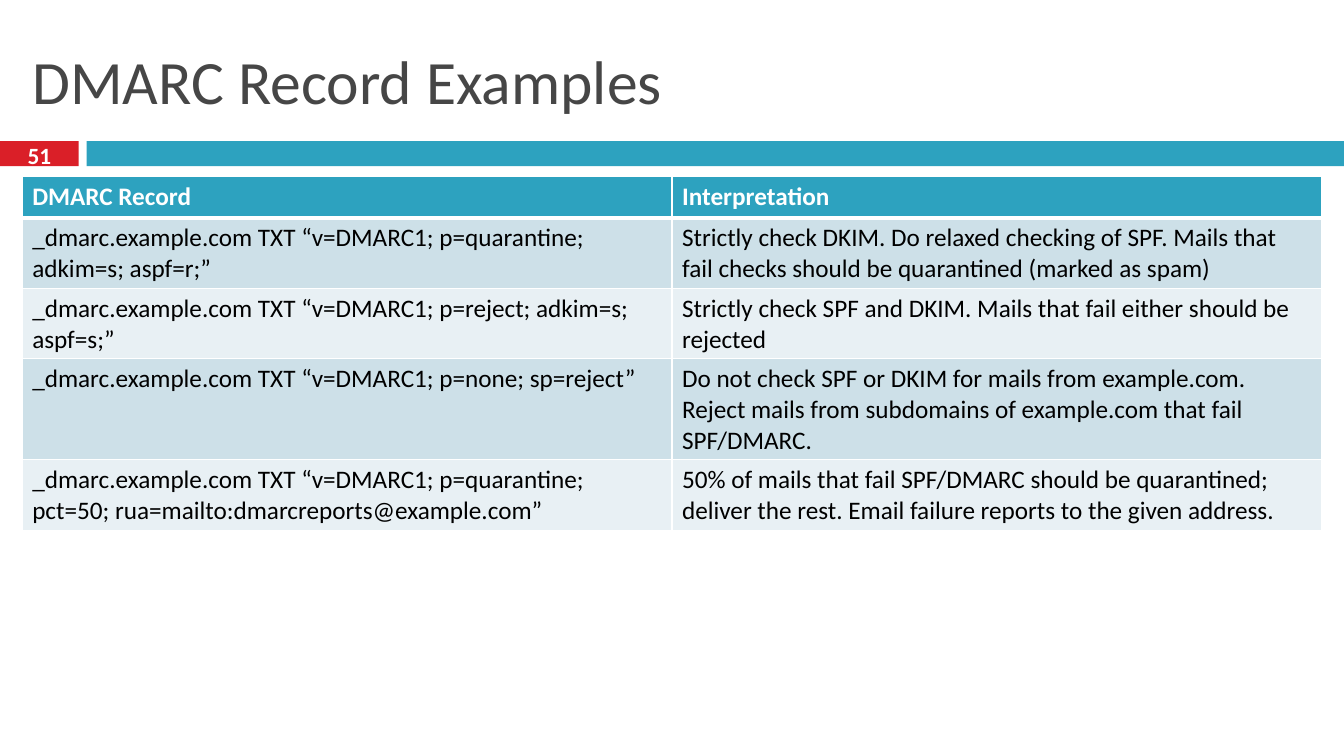
from lxml.etree import SubElement as Sub
from pptx import Presentation
from pptx.dml.color import RGBColor
from pptx.enum.shapes import MSO_SHAPE as Shape
from pptx.enum.text import MSO_ANCHOR as Anchor, MSO_AUTO_SIZE as Auto, PP_ALIGN as Align
from pptx.oxml.ns import qn
from pptx.util import Inches, Pt

WHITE, TEAL, RED, BLACK, GREY = "FFFFFF", "2DA2BF", "DA1F28", "000000", "464646"
BANDS = ["CDE0E8", "E8F0F4"]
LEFT, WIDTH = 1.65, 96.7

RECORDS = [
    ("DMARC Record", "Interpretation"),
    ("_dmarc.example.com TXT “v=DMARC1; p=quarantine; adkim=s; aspf=r;”",
     "Strictly check DKIM. Do relaxed checking of SPF. Mails that fail checks "
     "should be quarantined (marked as spam)"),
    ("_dmarc.example.com TXT “v=DMARC1; p=reject; adkim=s; aspf=s;”",
     "Strictly check SPF and DKIM. Mails that fail either should be rejected"),
    ("_dmarc.example.com TXT “v=DMARC1; p=none; sp=reject”",
     "Do not check SPF or DKIM for mails from example.com. Reject mails from "
     "subdomains of example.com that fail SPF/DMARC."),
    ("_dmarc.example.com TXT “v=DMARC1; p=quarantine; pct=50; "
     "rua=mailto:dmarcreports@example.com”",
     "50% of mails that fail SPF/DMARC should be quarantined; deliver the rest. "
     "Email failure reports to the given address."),
]


def rgb(value):
    """Turn a hex string into a colour."""
    return RGBColor.from_string(value)


class Deck:
    """Holds the style and the current slide; places are percent of its size."""

    font = "Calibri"

    def __init__(self, width, height):
        """Start a presentation with one title-only slide."""
        self.prs = Presentation()
        self.prs.slide_width, self.prs.slide_height = Inches(width), Inches(height)
        self.s = self.prs.slides.add_slide(self.prs.slide_layouts[5])

    def box(self, x, y, w, h):
        """Turn percent shares of the slide into lengths."""
        across, down = self.prs.slide_width, self.prs.slide_height
        return [int(share * size / 100)
                for share, size in zip((x, y, w, h), (across, down) * 2)]

    def label(self, tf, text, size, color, bold=False, align=Align.LEFT):
        """Put one formatted paragraph into a text frame."""
        tf.word_wrap = True
        p = tf.paragraphs[0]
        p.alignment = align
        r = p.add_run()
        r.text = text
        formats = {"name": self.font, "size": Pt(size), "bold": bold}
        for key, value in formats.items():
            setattr(r.font, key, value)
        r.font.color.rgb = rgb(color)

    def title(self, text, *place):
        """Move and fill the title placeholder."""
        sp = self.s.shapes.title
        for key, value in zip(("left", "top", "width", "height"), self.box(*place)):
            setattr(sp, key, value)
        sp.text_frame.auto_size = Auto.NONE
        sp.text_frame.vertical_anchor = Anchor.MIDDLE
        self.label(sp.text_frame, text, 44, GREY)

    def bar(self, color, *place):
        """Draw a plain filled rectangle."""
        sp = self.s.shapes.add_shape(Shape.RECTANGLE, *self.box(*place))
        sp.shadow.inherit = False
        sp.fill.solid()
        sp.fill.fore_color.rgb = rgb(color)
        sp.line.fill.background()

    def number(self, text, *place):
        """Add the centred slide number."""
        tf = self.s.shapes.add_textbox(*self.box(*place)).text_frame
        tf.vertical_anchor = Anchor.MIDDLE
        self.label(tf, text, 16.6, WHITE, True, Align.CENTER)

    def border(self, cell, **widths):
        """Give a cell white borders of the given point widths."""
        for side, width in widths.items():
            ln = Sub(cell._tc.get_or_add_tcPr(), qn(f"a:ln{side}"), w=str(Pt(width)))
            Sub(Sub(ln, qn("a:solidFill")), qn("a:srgbClr"), val=WHITE)

    def table(self, rows, *place):
        """Add a table with a teal header and banded rows."""
        tbl = self.s.shapes.add_table(len(rows), len(rows[0]), *self.box(*place)).table
        for i, row in enumerate(rows):
            head = i == 0
            for j, text in enumerate(row):
                cell = tbl.cell(i, j)
                self.border(cell, L=1, R=1, T=3 if i == 1 else 1, B=3 if head else 1)
                cell.fill.solid()
                cell.fill.fore_color.rgb = rgb(TEAL if head else BANDS[(i - 1) % 2])
                self.label(cell.text_frame, text, 18, WHITE if head else BLACK, head)


def main():
    """Build the slide."""
    deck = Deck(13.33, 7.5)
    deck.bar(RED, 0, 18.67, 5.85, 3.33)
    deck.bar(TEAL, 6.45, 18.67, 93.55, 3.33)
    deck.title("DMARC Record Examples", LEFT, 3.33, WIDTH, 14.4)
    deck.number("51", 0, 18.27, 5.85, 4.4)
    deck.table(RECORDS, LEFT, 23.33, WIDTH, 27.33)
    deck.prs.save("out.pptx")


if __name__ == "__main__":
    main()
